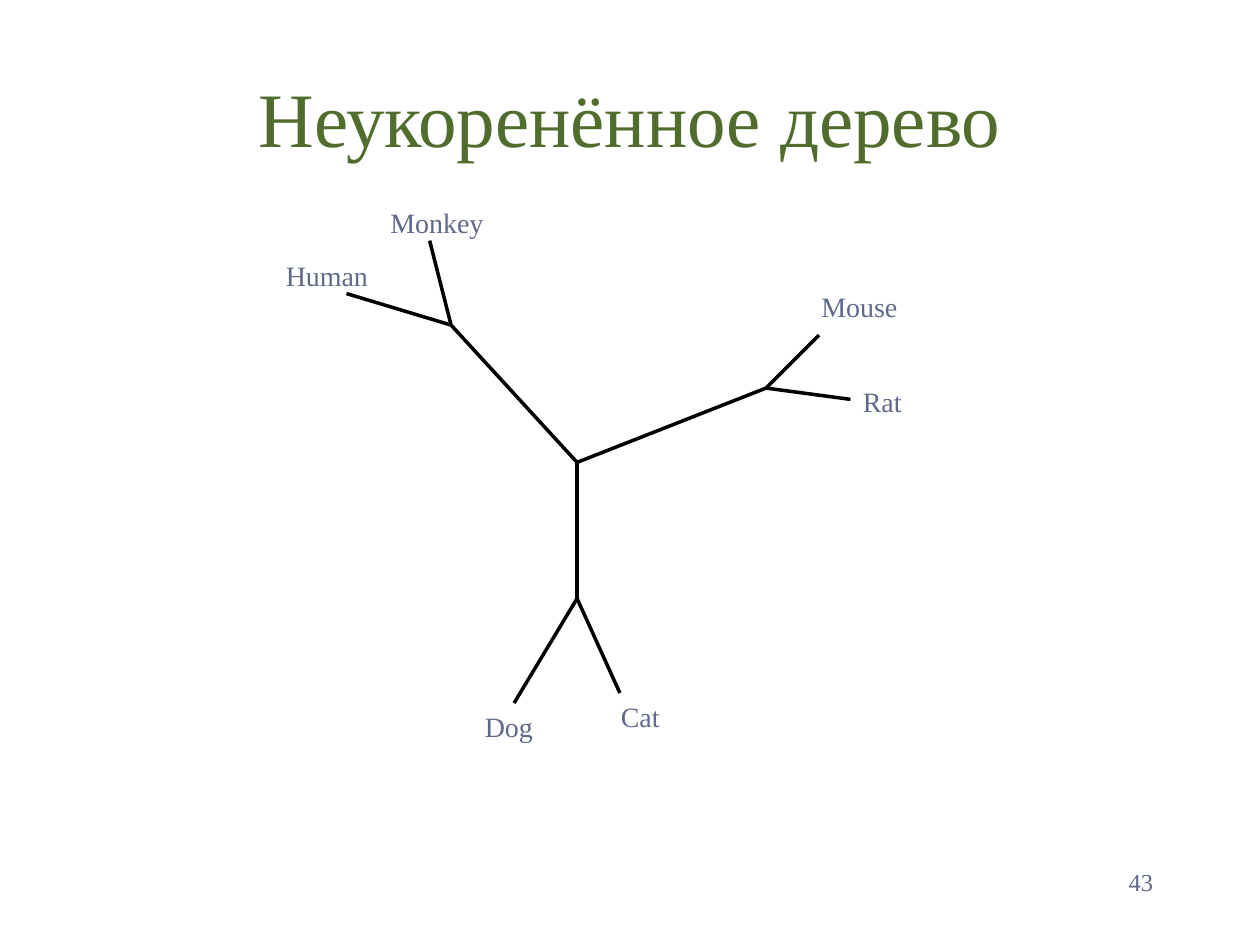
from pptx import Presentation
from pptx.dml.color import RGBColor
from pptx.enum.shapes import MSO_CONNECTOR
from pptx.enum.text import MSO_ANCHOR, PP_ALIGN
from pptx.oxml.ns import qn
from pptx.util import Inches, Pt
from lxml.etree import SubElement

COLORS = {"title": "506D2D", "label": "61698B", "branch": "000000"}


class TreeSlide:
    """Style and current slide of an unrooted tree."""

    font = "Times New Roman"
    branch_width = 2

    def __init__(self, slide):
        self.slide = slide

    def text(self, wording, left, top, width, height, size=16, color="label",
             align=PP_ALIGN.LEFT, anchor=MSO_ANCHOR.TOP):
        box = self.slide.shapes.add_textbox(
            Inches(left), Inches(top), Inches(width), Inches(height))
        frame = box.text_frame
        frame.word_wrap = True
        frame.vertical_anchor = anchor
        paragraph = frame.paragraphs[0]
        paragraph.alignment = align
        run = paragraph.add_run()
        run.text = wording
        run.font.name = self.font
        run.font.size = Pt(size)
        run.font.color.rgb = RGBColor.from_string(COLORS[color])

    def branch(self, start, end):
        line = self.slide.shapes.add_connector(
            MSO_CONNECTOR.STRAIGHT, *map(Inches, start + end))
        line.line.color.rgb = RGBColor.from_string(COLORS["branch"])
        line.line.width = Pt(self.branch_width)
        SubElement(line._element.spPr, qn("a:effectLst"))


def main():
    deck = Presentation()
    deck.slide_width, deck.slide_height = Inches(10), Inches(7.5)
    tree = TreeSlide(deck.slides.add_slide(deck.slide_layouts[6]))

    tree.text("Неукоренённое дерево", 0.5, 0.3, 9, 1.25, size=44, color="title",
              align=PP_ALIGN.CENTER, anchor=MSO_ANCHOR.MIDDLE)

    center = (4.58, 3.67)
    clades = {
        (3.58, 2.58): [("Human", (2.75, 2.33), (2.17, 2), 0.92),
                       ("Monkey", (3.41, 1.91), (3, 1.58), 1)],
        (6.08, 3.08): [("Mouse", (6.5, 2.66), (6.42, 2.25), 1.25),
                       ("Rat", (6.75, 3.17), (6.75, 3), 0.67)],
        (4.58, 4.75): [("Dog", (4.08, 5.58), (3.75, 5.58), 0.67),
                       ("Cat", (4.92, 5.5), (4.83, 5.5), 0.67)],
    }
    for node, leaves in clades.items():
        tree.branch(center, node)
        for species, tip, corner, width in leaves:
            tree.branch(node, tip)
            tree.text(species, *corner, width, 0.37)

    tree.text("43", 7.17, 6.83, 2.08, 0.5, size=14, align=PP_ALIGN.RIGHT)
    deck.save("out.pptx")


if __name__ == "__main__":
    main()
